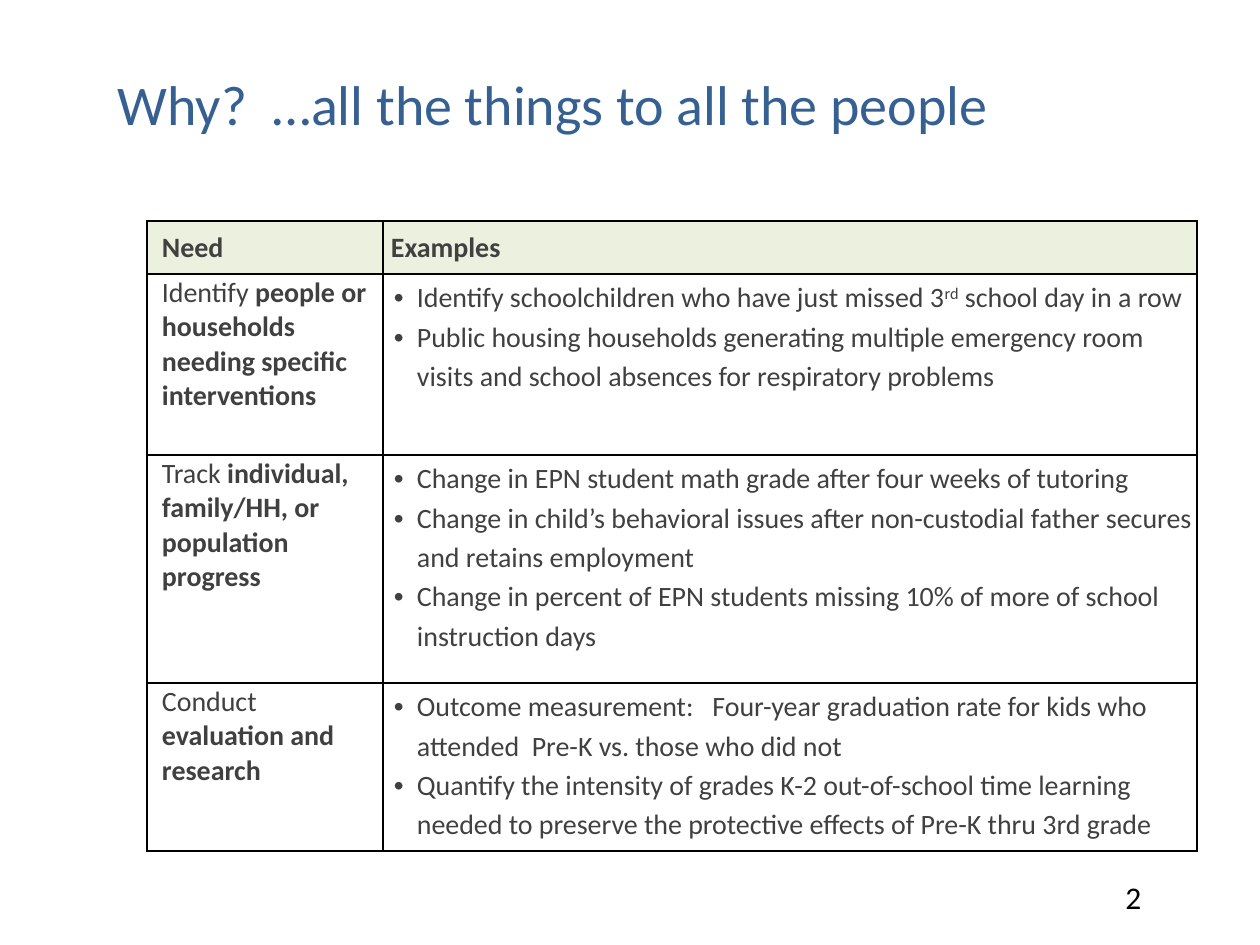
from lxml import etree
from pptx import Presentation
from pptx import util as u
from pptx.dml.color import RGBColor
from pptx.enum import text
from pptx.oxml import ns

PX = 914400 / 126
FONT = "Calibri"
BLUE = RGBColor(0x37, 0x60, 0x92)
GRAY = RGBColor(0x40, 0x40, 0x40)
BLACK = RGBColor(0, 0, 0)
PALE_GREEN = RGBColor(0xEB, 0xF1, 0xDE)

TITLE = "Why?  …all the things to all the people"
HEADERS = [("Need", 13), ("Examples", 6)]
COLUMNS = [236, 814]
ROWS = [53, 181, 228, 168]
NEEDS = [
    (
        ("Identify ", "people or households needing specific interventions"),
        [
            ("Identify schoolchildren who have just missed 3", "rd", " school day in a row"),
            ("Public housing households generating multiple emergency room visits "
             "and school absences for respiratory problems",),
        ],
    ),
    (
        ("Track ", "individual, family/HH, or population progress"),
        [
            ("Change in EPN student math grade after four weeks of tutoring",),
            ("Change in child’s behavioral issues after non-custodial father "
             "secures and retains employment",),
            ("Change in percent of EPN students missing 10% of more of school "
             "instruction days",),
        ],
    ),
    (
        ("Conduct ", "evaluation and research"),
        [
            ("Outcome measurement:   Four-year graduation rate for kids who "
             "attended  Pre-K vs. those who did not",),
            ("Quantify the intensity of grades K-2 out-of-school time learning "
             "needed to preserve the protective effects of Pre-K thru 3rd grade",),
        ],
    ),
]


def px(length):
    return u.Emu(round(length * PX))


def style(font, size, color, bold=None):
    font.name = FONT
    font.size = u.Pt(size)
    font.color.rgb = color
    font.bold = bold


def indent(para, left, hanging=0):
    props = para._p.get_or_add_pPr()
    props.set("marL", str(px(left)))
    props.set("indent", str(-px(hanging)))
    return props


def add_borders(cell):
    props = cell._tc.get_or_add_tcPr()
    for position, side in enumerate(("lnL", "lnR", "lnT", "lnB")):
        line = etree.Element(ns.qn(f"a:{side}"), w=str(u.Pt(1)))
        fill = etree.SubElement(line, ns.qn("a:solidFill"))
        etree.SubElement(fill, ns.qn("a:srgbClr"), val=str(BLACK))
        props.insert(position, line)


def prepare_cell(cell, is_header):
    cell.margin_left = cell.margin_right = px(2)
    cell.margin_top = cell.margin_bottom = px(2)
    if is_header:
        cell.fill.solid()
        cell.fill.fore_color.rgb = PALE_GREEN
        cell.vertical_anchor = text.MSO_ANCHOR.MIDDLE
    else:
        cell.fill.background()
    add_borders(cell)


def fill_header(cell, label, left):
    para = cell.text_frame.paragraphs[0]
    indent(para, left)
    para.text = label
    style(para.font, 16, GRAY, True)


def fill_need(cell, parts):
    para = cell.text_frame.paragraphs[0]
    indent(para, 13)
    style(para.font, 16, GRAY)
    for part, bold in zip(parts, (False, True)):
        span = para.add_run()
        span.text = part
        span.font.bold = bold


def fill_examples(cell, examples):
    frame = cell.text_frame
    for number, parts in enumerate(examples):
        para = frame.add_paragraph() if number else frame.paragraphs[0]
        props = indent(para, 32, 23)
        etree.SubElement(props, ns.qn("a:buFont"), typeface="Arial")
        etree.SubElement(props, ns.qn("a:buChar"), char="•")
        para.line_spacing = 1.15
        style(para.font, 16, GRAY, False)
        for part in parts:
            span = para.add_run()
            span.text = part
            if part == "rd":
                span._r.get_or_add_rPr().set("baseline", "30000")


def add_title(page, left, top, width, height):
    title = page.shapes.title
    title.left, title.top = px(left), px(top)
    title.width, title.height = px(width), px(height)
    frame = title.text_frame
    frame.vertical_anchor = text.MSO_ANCHOR.MIDDLE
    para = frame.paragraphs[0]
    para.text = TITLE
    para.alignment = text.PP_ALIGN.LEFT
    style(para.font, 32, BLUE)


def add_needs_table(page, left, top):
    table = page.shapes.add_table(
        len(ROWS), len(COLUMNS), px(left), px(top), px(sum(COLUMNS)), px(sum(ROWS))
    ).table
    table.horz_banding = False
    for column, width in zip(table.columns, COLUMNS):
        column.width = px(width)
    for number, (row, height) in enumerate(zip(table.rows, ROWS)):
        row.height = px(height)
        for cell in row.cells:
            prepare_cell(cell, number == 0)
    for column, (label, inset) in enumerate(HEADERS):
        fill_header(table.cell(0, column), label, inset)
    for row, (need, examples) in enumerate(NEEDS, 1):
        fill_need(table.cell(row, 0), need)
        fill_examples(table.cell(row, 1), examples)


def add_page_number(page, left, top, width, height):
    box = page.shapes.add_textbox(px(left), px(top), px(width), px(height))
    box.text_frame.word_wrap = True
    para = box.text_frame.paragraphs[0]
    para.text = "2"
    style(para.font, 18, BLACK)


def main():
    deck = Presentation()
    deck.slide_width, deck.slide_height = px(1260), px(945)
    page = deck.slides.add_slide(deck.slide_layouts[5])
    add_needs_table(page, 147, 221)
    add_title(page, 105, 38, 1092, 130)
    add_page_number(page, 1113, 872, 105, 48)
    deck.save("out.pptx")


if __name__ == "__main__":
    main()
